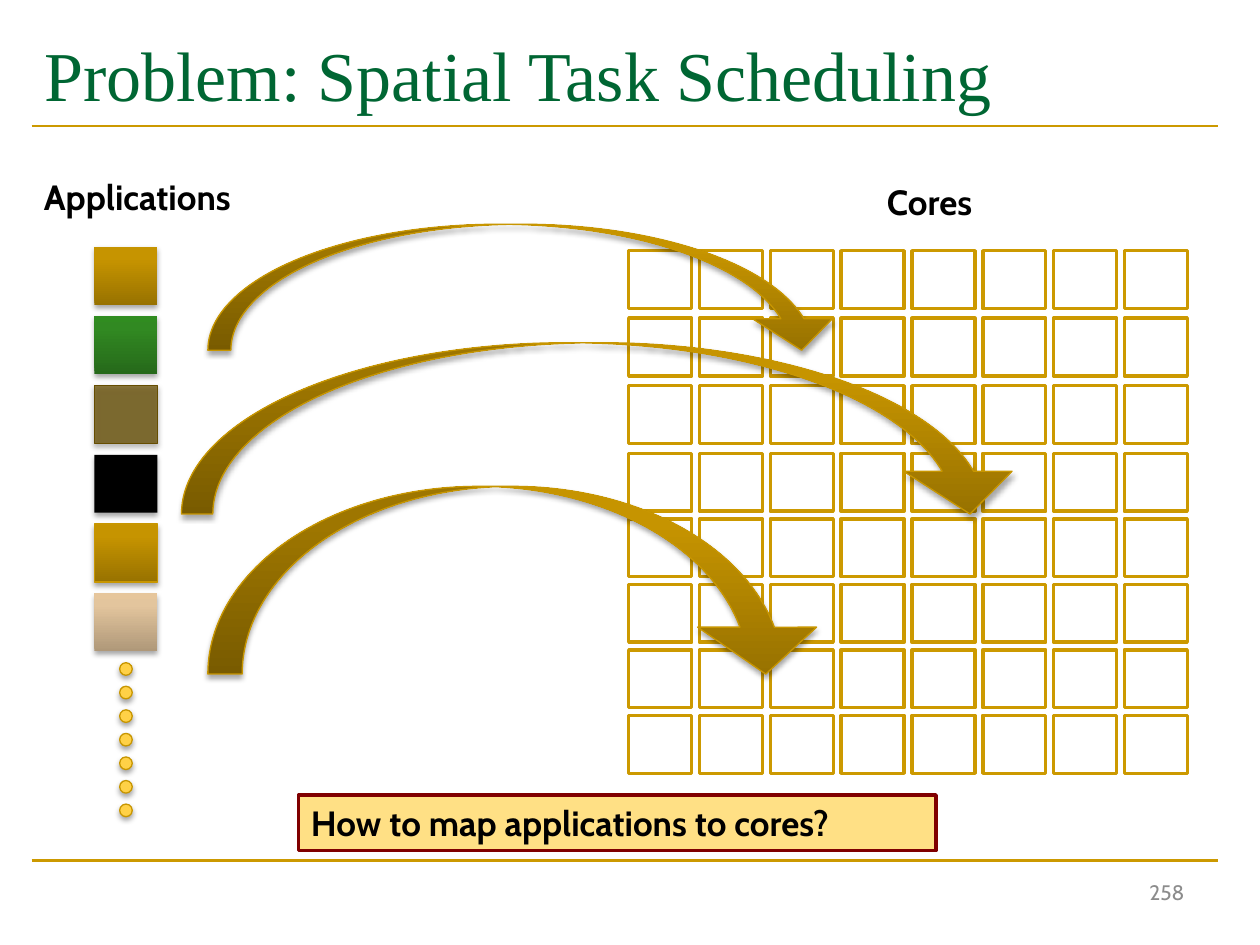
from dataclasses import dataclass
from typing import Optional, Union

from lxml.etree import SubElement
from pptx import Presentation
from pptx.dml.color import RGBColor
from pptx.enum.shapes import MSO_CONNECTOR as Connector
from pptx.enum.shapes import MSO_SHAPE as Preset
from pptx.enum.text import MSO_ANCHOR as Anchor
from pptx.enum.text import MSO_AUTO_SIZE as AutoSize
from pptx.enum.text import PP_ALIGN as Align
from pptx.oxml.ns import qn
from pptx.util import Inches, Pt

WIDTH, HEIGHT = Inches(10), Inches(7.5)
COLUMN, ROW = WIDTH / 100, HEIGHT / 75

WHITE = RGBColor(0xFF, 0xFF, 0xFF)
BLACK = RGBColor(0x00, 0x00, 0x00)
GREEN = RGBColor(0x00, 0x66, 0x33)
GOLD = RGBColor(0xCC, 0x99, 0x00)
EDGE_GOLD = RGBColor(0xC8, 0x96, 0x00)
BROWN = RGBColor(0x66, 0x4D, 0x00)
DOT_YELLOW = RGBColor(0xFF, 0xD1, 0x47)
PALE_YELLOW = RGBColor(0xFF, 0xE0, 0x85)
MAROON = RGBColor(0x80, 0x00, 0x00)
GREY = RGBColor(0x8C, 0x8C, 0x8C)

BODY_FONT, TITLE_FONT = "Cabin", "Times New Roman"


@dataclass(frozen=True)
class Box:
    left: float
    top: float
    width: float
    height: float

    def emu(self) -> tuple[int, int, int, int]:
        return (round(self.left * COLUMN), round(self.top * ROW),
                round(self.width * COLUMN), round(self.height * ROW))


@dataclass(frozen=True)
class Gradient:
    bottom: RGBColor
    upper: RGBColor
    top: RGBColor


@dataclass(frozen=True)
class Look:
    fill: Union[RGBColor, Gradient]
    edge: Optional[RGBColor] = None
    weight: float = 0.75
    opacity: int = 100
    shadow: bool = True


@dataclass(frozen=True)
class Lettering:
    size: float
    color: RGBColor = BLACK
    font: str = BODY_FONT
    bold: bool = False


GOLD_FADE = Gradient(RGBColor(0x98, 0x72, 0x00), RGBColor(0xC6, 0x94, 0x00),
                     RGBColor(0xC7, 0x95, 0x00))
GREEN_FADE = Gradient(RGBColor(0x26, 0x69, 0x1A), RGBColor(0x31, 0x89, 0x22),
                      RGBColor(0x30, 0x8C, 0x20))
TAN_FADE = Gradient(RGBColor(0xAF, 0x98, 0x79), RGBColor(0xE3, 0xC5, 0x9D),
                    RGBColor(0xE6, 0xC6, 0x9C))

CORE = Look(WHITE, GOLD, weight=2, shadow=False)
DOT = Look(DOT_YELLOW, EDGE_GOLD)
ARROW = Look(GOLD_FADE, EDGE_GOLD)
CALLOUT = Look(PALE_YELLOW, MAROON, weight=2, shadow=False)
APPLICATIONS = [Look(GOLD_FADE), Look(GREEN_FADE), Look(BROWN, BROWN, opacity=75),
                Look(BLACK), Look(GOLD_FADE, EDGE_GOLD), Look(TAN_FADE)]
MAPPINGS = [Box(16.5, 17.8, 50.3, 10), Box(14.4, 27.2, 66.9, 13.6),
            Box(16.5, 38.6, 49, 14.9)]

TILE_WIDTH, TILE_HEIGHT = 5, 4.6
CORES_LEFT, CORES_TOP, CORES_PER_SIDE = 49.9, 19.9, 8
CORE_STEP, UPPER_STEP, LOWER_STEP, UPPER_ROWS = 5.62, 5.36, 5.2, 3
APPS_LEFT, APPS_TOP, APP_STEP = 7.5, 19.6, 5.5
DOT_COUNT, DOT_SIZE, DOTS_TOP, DOT_STEP = 7, 1, 52.6, 1.87
RULE_LEFT, RULE_RIGHT, RULE_ROWS = 2.5, 96.7, (10, 68.3)

HEADING = Lettering(20, bold=True)


def add_color(parent, color: RGBColor, opacity: int = 100) -> None:
    srgb = SubElement(parent, qn("a:srgbClr"), val=str(color))
    if opacity < 100:
        SubElement(srgb, qn("a:alpha"), val=str(opacity * 1000))


def fill_gradient(shape, gradient: Gradient) -> None:
    shape.fill.gradient()
    shape.fill.gradient_angle = 90
    stops = shape._element.spPr.find(".//" + qn("a:gsLst"))
    stops.clear()
    for share, color in ((0, gradient.bottom), (80, gradient.upper), (100, gradient.top)):
        add_color(SubElement(stops, qn("a:gs"), pos=str(share * 1000)), color)


def apply_look(shape, look: Look) -> None:
    if isinstance(look.fill, Gradient):
        fill_gradient(shape, look.fill)
    else:
        shape.fill.solid()
        shape.fill.fore_color.rgb = look.fill
        if look.opacity < 100:
            srgb = shape._element.spPr.find(qn("a:solidFill"))[0]
            SubElement(srgb, qn("a:alpha"), val=str(look.opacity * 1000))
    if look.edge is None:
        shape.line.fill.background()
    else:
        shape.line.color.rgb = look.edge
        shape.line.width = Pt(look.weight)
    shape.shadow.inherit = False
    if look.shadow:
        effects = shape._element.spPr.find(qn("a:effectLst"))
        outer = SubElement(effects, qn("a:outerShdw"), blurRad=str(Pt(3.1)),
                           dist=str(Pt(1.8)), dir="5400000", rotWithShape="0")
        add_color(outer, BLACK, 35)


def draw_shape(shapes, preset: Preset, box: Box, look: Look):
    shape = shapes.add_shape(preset, *box.emu())
    apply_look(shape, look)
    return shape


def draw_rule(slide, row: float) -> None:
    y = round(row * ROW)
    rule = slide.shapes.add_connector(Connector.STRAIGHT, round(RULE_LEFT * COLUMN), y,
                                      round(RULE_RIGHT * COLUMN), y)
    rule.line.color.rgb = GOLD
    rule.line.width = Pt(1.5)
    SubElement(rule._element.spPr, qn("a:effectLst"))


def write(frame, text: str, lettering: Lettering, align: Align = Align.LEFT) -> None:
    paragraph = frame.paragraphs[0]
    paragraph.alignment = align
    run = paragraph.add_run()
    run.text = text
    run.font.size = Pt(lettering.size)
    run.font.name = lettering.font
    run.font.bold = lettering.bold
    run.font.color.rgb = lettering.color


def draw_heading(slide, box: Box, text: str):
    heading = slide.shapes.add_textbox(*box.emu())
    heading.text_frame.word_wrap = False
    heading.text_frame.auto_size = AutoSize.SHAPE_TO_FIT_TEXT
    write(heading.text_frame, text, HEADING)
    return heading


def draw_title(slide) -> None:
    title = slide.shapes.title
    title.left, title.top, title.width, title.height = Box(2.5, 1.7, 94.2, 8.3).emu()
    title.text_frame.auto_size = AutoSize.NONE
    title.text_frame.vertical_anchor = Anchor.MIDDLE
    write(title.text_frame, "Problem: Spatial Task Scheduling",
          Lettering(40, GREEN, TITLE_FONT))


def draw_cores(slide) -> None:
    cores = slide.shapes.add_group_shape().shapes
    for row in range(CORES_PER_SIDE):
        upper = min(row, UPPER_ROWS)
        top = CORES_TOP + upper * UPPER_STEP + (row - upper) * LOWER_STEP
        for column in range(CORES_PER_SIDE):
            left = CORES_LEFT + column * CORE_STEP
            draw_shape(cores, Preset.RECTANGLE, Box(left, top, TILE_WIDTH, TILE_HEIGHT), CORE)


def draw_applications(slide) -> None:
    queue = slide.shapes.add_group_shape().shapes
    for index, look in enumerate(APPLICATIONS):
        tile = Box(APPS_LEFT, APPS_TOP + index * APP_STEP, TILE_WIDTH, TILE_HEIGHT)
        draw_shape(queue, Preset.RECTANGLE, tile, look)
    dots_left = APPS_LEFT + (TILE_WIDTH - DOT_SIZE) / 2
    for index in range(DOT_COUNT):
        dot = Box(dots_left, DOTS_TOP + index * DOT_STEP, DOT_SIZE, DOT_SIZE)
        draw_shape(queue, Preset.OVAL, dot, DOT)


def draw_mappings(slide) -> None:
    for box in MAPPINGS:
        arrow = draw_shape(slide.shapes, Preset.CURVED_DOWN_ARROW, box, ARROW)
        for index, share in enumerate((0.183, 0.634, 0.25)):
            arrow.adjustments[index] = share


def main() -> None:
    deck = Presentation()
    deck.slide_width, deck.slide_height = WIDTH, HEIGHT
    slide = deck.slides.add_slide(deck.slide_layouts.get_by_name("Title Only"))
    for row in RULE_ROWS:
        draw_rule(slide, row)
    draw_title(slide)
    draw_cores(slide)
    draw_heading(slide, Box(2.5, 13.4, 19.3, 4.4), "Applications")
    draw_heading(slide, Box(69.4, 13.8, 9.9, 4.4), "Cores")
    draw_applications(slide)
    draw_mappings(slide)
    question = draw_heading(slide, Box(23.7, 63.1, 50.6, 4.4), "How to map applications to cores?")
    apply_look(question, CALLOUT)
    number = slide.shapes.add_textbox(*Box(71.7, 68.3, 23.3, 5).emu())
    number.text_frame.word_wrap = True
    number.text_frame.vertical_anchor = Anchor.MIDDLE
    write(number.text_frame, "258", Lettering(12, GREY), Align.RIGHT)
    deck.save("out.pptx")


if __name__ == "__main__":
    main()
